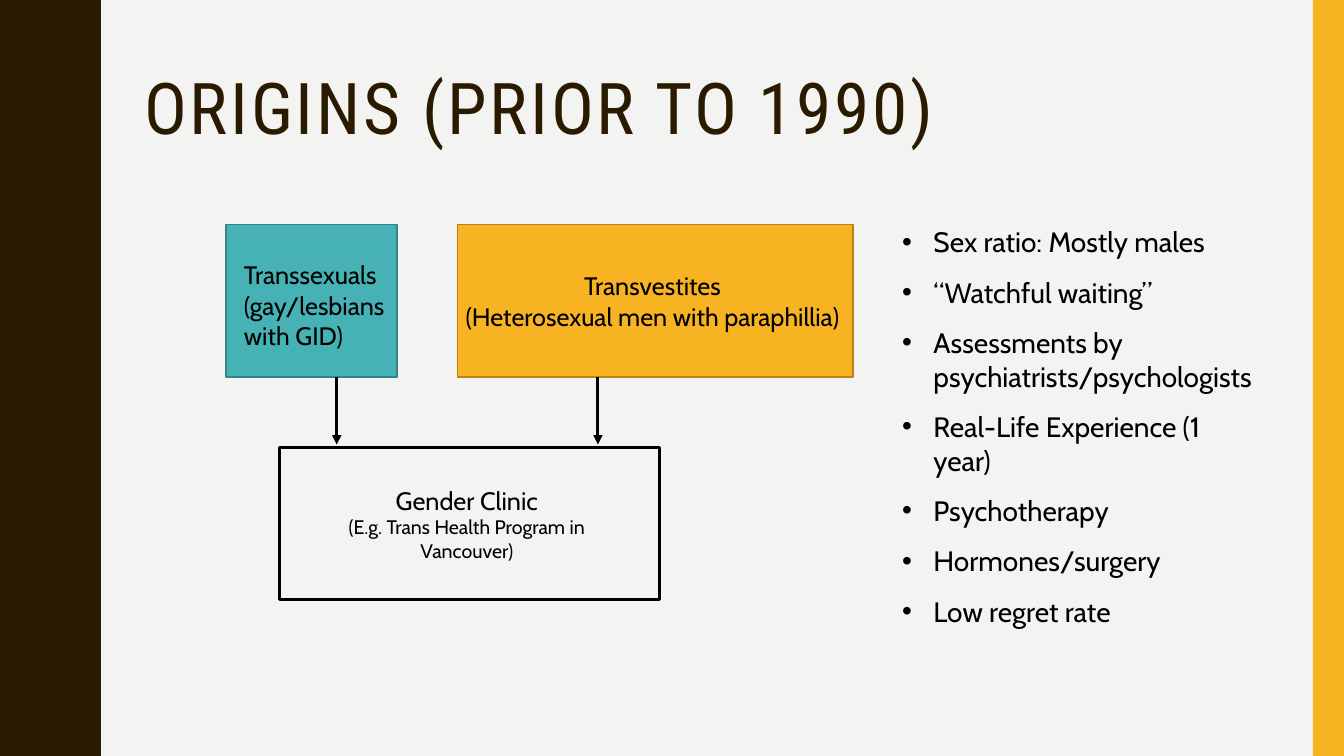
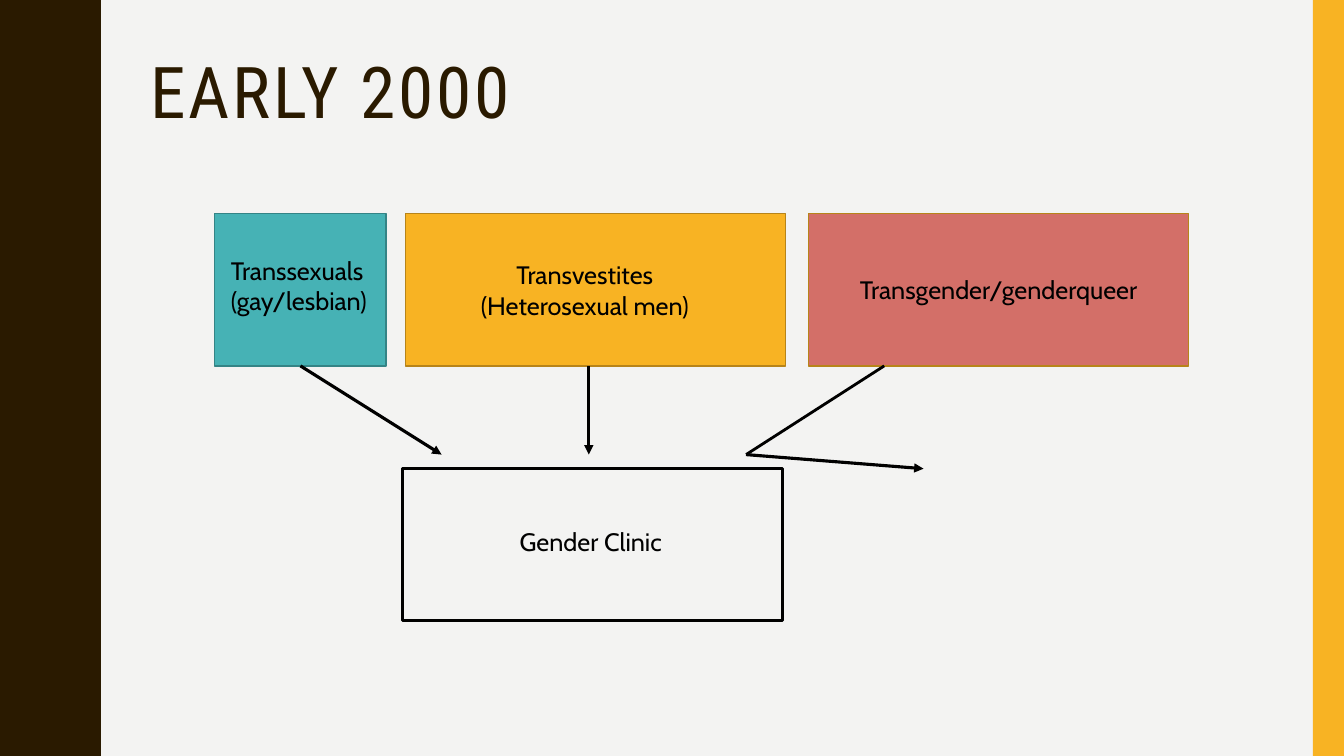
from collections import namedtuple

from lxml.etree import SubElement
from pptx import Presentation
from pptx.dml.color import RGBColor
from pptx.enum.shapes import MSO_CONNECTOR, MSO_SHAPE
from pptx.enum.text import MSO_ANCHOR, MSO_AUTO_SIZE, PP_ALIGN
from pptx.oxml.ns import qn
from pptx.util import Inches, Pt

SLIDE_W, SLIDE_H = 13.33, 7.5
PAPER = RGBColor(0xF3, 0xF3, 0xF2)
BROWN = RGBColor(0x2A, 0x1A, 0x00)
BLACK = RGBColor(0x00, 0x00, 0x00)
TEAL = RGBColor(0x46, 0xB2, 0xB5)
TEAL_EDGE = RGBColor(0x34, 0x84, 0x86)
AMBER = RGBColor(0xF8, 0xB3, 0x23)
AMBER_EDGE = RGBColor(0xB7, 0x84, 0x1A)
ROSE = RGBColor(0xD3, 0x6F, 0x68)
TITLE_FONT, BODY_FONT = "Roboto Condensed", "Cabin"

# Group boxes share one height; wide boxes share one width
BOX_H, NARROW_W, WIDE_W = 1.51, 1.7, 3.77
WAVE_PERIOD = 1.5
HALF_WAVE = [(0.78, 0), (0.78, 0.07), (0.79, 0.14), (0.8, 0.2), (0.81, 0.25),
             (0.83, 0.29), (0.85, 0.33), (0.87, 0.38), (0.89, 0.42),
             (0.91, 0.46), (0.93, 0.5), (0.95, 0.55), (0.96, 0.61),
             (0.97, 0.68), (0.97, 0.75)]

Box = namedtuple("Box", "left top width height")


def inches(box):
    return [Inches(length) for length in box]


def set_insets(frame, left, top, right, bottom):
    frame.margin_left, frame.margin_top = Inches(left), Inches(top)
    frame.margin_right, frame.margin_bottom = Inches(right), Inches(bottom)


def set_font(paragraph, name, size, color):
    paragraph.font.name = name
    paragraph.font.size = Pt(size)
    paragraph.font.color.rgb = color


def paint(shape, fill, edge=None, edge_width=1):
    shape.shadow.inherit = False
    if fill is None:
        shape.fill.background()
    else:
        shape.fill.solid()
        shape.fill.fore_color.rgb = fill
    if edge is None:
        shape.line.fill.background()
    else:
        shape.line.color.rgb = edge
        shape.line.width = Pt(edge_width)


def decorate_master(master, slide):
    """Background, wavy left band and right stripe, shared by every slide."""
    master.background.fill.solid()
    master.background.fill.fore_color.rgb = PAPER

    falling = [(x, WAVE_PERIOD - y) for x, y in reversed(HALF_WAVE[1:-1])]
    edge = [(x, y + turn * WAVE_PERIOD)
            for turn in range(round(SLIDE_H / WAVE_PERIOD))
            for x, y in HALF_WAVE + falling]
    outline = slide.shapes.build_freeform(0, 0, scale=Inches(1))
    outline.add_line_segments(edge + [(HALF_WAVE[0][0], SLIDE_H), (0, SLIDE_H)])
    wave = outline.convert_to_shape()
    paint(wave, BROWN)

    stripe_w = 0.31
    stripe = slide.shapes.add_shape(MSO_SHAPE.RECTANGLE, *inches(
        Box(SLIDE_W - stripe_w, 0, stripe_w, SLIDE_H)))
    paint(stripe, AMBER)

    # Move both bands behind the master's own placeholders
    for index, band in enumerate((wave, stripe), start=2):
        master.shapes._spTree.insert(index, band._element)


def place_title(slide, text, left, top):
    title = slide.shapes.title
    title.left, title.top, title.width, title.height = inches(
        Box(left, top, 11.13, 1.24))
    frame = title.text_frame
    frame.text = text
    frame.word_wrap = True
    frame.auto_size = MSO_AUTO_SIZE.NONE
    frame.vertical_anchor = MSO_ANCHOR.TOP
    heading = frame.paragraphs[0]
    heading.alignment = PP_ALIGN.LEFT
    heading.line_spacing = 0.9
    set_font(heading, TITLE_FONT, 51, BROWN)
    heading.runs[0].font._element.set("spc", "200")


def add_group(slide, box, lines, fill=None, edge=BLACK, edge_width=1,
              align=PP_ALIGN.CENTER, insets=(0.1, 0.05, 0.1, 0.05)):
    """Box whose label is a list of (text, size) lines."""
    group = slide.shapes.add_shape(MSO_SHAPE.RECTANGLE, *inches(box))
    paint(group, fill, edge, edge_width)
    frame = group.text_frame
    frame.word_wrap = True
    frame.vertical_anchor = MSO_ANCHOR.MIDDLE
    set_insets(frame, *insets)
    for index, (text, size) in enumerate(lines):
        line = frame.add_paragraph() if index else frame.paragraphs[0]
        line.text = text
        line.alignment = align
        set_font(line, BODY_FONT, size, BLACK)


def add_transsexuals(slide, left, top, text, insets):
    add_group(slide, Box(left, top, NARROW_W, BOX_H), [(text, 18)], TEAL,
              TEAL_EDGE, align=PP_ALIGN.LEFT, insets=insets)


def add_transvestites(slide, box, detail, insets):
    add_group(slide, box, [("Transvestites", 18), (detail, 18)], AMBER,
              AMBER_EDGE, insets=insets)


def add_clinic(slide, left, top, *details, insets):
    add_group(slide, Box(left, top, WIDE_W, BOX_H),
              [("Gender Clinic", 18), *details], edge_width=2.25, insets=insets)


def add_path(slide, start, end, width=2.25, arrow=True):
    path = slide.shapes.add_connector(
        MSO_CONNECTOR.STRAIGHT, *inches(start + end))
    path.line.color.rgb = BLACK
    path.line.width = Pt(width)
    if arrow:
        SubElement(path.line._get_or_add_ln(), qn("a:tailEnd"), type="triangle")
    SubElement(path._element.spPr, qn("a:effectLst"))


def add_bullets(slide, box, items):
    frame = slide.shapes.add_textbox(*inches(box)).text_frame
    frame.word_wrap = True
    for index, item in enumerate(items):
        point = frame.add_paragraph() if index else frame.paragraphs[0]
        point.text = item
        point.space_after = Pt(12)
        set_font(point, BODY_FONT, 20, BLACK)
        props = point._p.get_or_add_pPr()
        indent = Inches(0.31)
        props.set("marL", str(indent))
        props.set("indent", str(-indent))
        # Bullet marks stand before the default run properties
        bullet_font = props.makeelement(qn("a:buFont"), {"typeface": "Arial"})
        bullet = props.makeelement(qn("a:buChar"), {"char": "•"})
        defaults = props.find(qn("a:defRPr"))
        if defaults is None:
            props.extend((bullet_font, bullet))
        else:
            defaults.addprevious(bullet_font)
            defaults.addprevious(bullet)


def origins_diagram(slide, left, top):
    add_transsexuals(slide, left, top, "Transsexuals (gay/lesbians with GID)",
                     insets=(0.18, 0.13, 0.08, 0.05))
    add_transvestites(slide, Box(left + 2.3, top, 3.92, BOX_H),
                      "(Heterosexual men with paraphillia)",
                      insets=(0.04, 0.05, 0.1, 0.05))
    for offset in (1.1, 3.69):
        add_path(slide, (left + offset, top + BOX_H),
                 (left + offset, top + 2.18))
    add_clinic(slide, left + 0.53, top + 2.21,
               ("(E.g. Trans Health Program in Vancouver)", 14),
               insets=(0.27, 0.05, 0.32, 0.05))


def early_diagram(slide, left, top):
    vestites_left, queer_left = left + 1.89, left + 5.89
    base, clinic_top = top + BOX_H, top + 2.53
    arrival = top + 2.39
    add_transsexuals(slide, left, top, "Transsexuals (gay/lesbian)",
                     insets=(0.16, 0.05, 0.1, 0.13))
    add_transvestites(slide, Box(vestites_left, top, WIDE_W, BOX_H),
                      "(Heterosexual men)", insets=(0.05, 0.05, 0.26, 0.05))
    add_group(slide, Box(queer_left, top, WIDE_W, BOX_H),
              [("Transgender/genderqueer", 18)], ROSE, AMBER_EDGE)
    add_clinic(slide, left + 1.86, clinic_top, insets=(0.1, 0.05, 0.13, 0.12))

    # Two groups reach the clinic; the third turns away from it
    turn_x = left + 5.27
    add_path(slide, (left + NARROW_W / 2, base), (left + 2.25, arrival))
    add_path(slide, (left + 3.71, base), (left + 3.71, arrival))
    add_path(slide, (queer_left + 0.75, base), (turn_x, arrival),
             width=2, arrow=False)
    add_path(slide, (turn_x, arrival), (left + 7.03, clinic_top))


def main():
    prs = Presentation()
    prs.slide_width, prs.slide_height = Inches(SLIDE_W), Inches(SLIDE_H)
    title_only = prs.slide_layouts[5]

    origins = prs.slides.add_slide(title_only)
    decorate_master(prs.slide_master, origins)
    place_title(origins, "ORIGINS (PRIOR TO 1990)", 1.33, 0.67)
    origins_diagram(origins, 2.24, 2.23)
    add_bullets(origins, Box(8.85, 2.18, 3.77, 4.31), [
        "Sex ratio: Mostly males",
        "“Watchful waiting”",
        "Assessments by psychiatrists/psychologists",
        "Real-Life Experience (1 year)",
        "Psychotherapy",
        "Hormones/surgery",
        "Low regret rate",
    ])

    early = prs.slides.add_slide(title_only)
    place_title(early, "EARLY 2000", 1.39, 0.51)
    early_diagram(early, 2.13, 2.12)

    prs.save("out.pptx")


if __name__ == "__main__":
    main()
